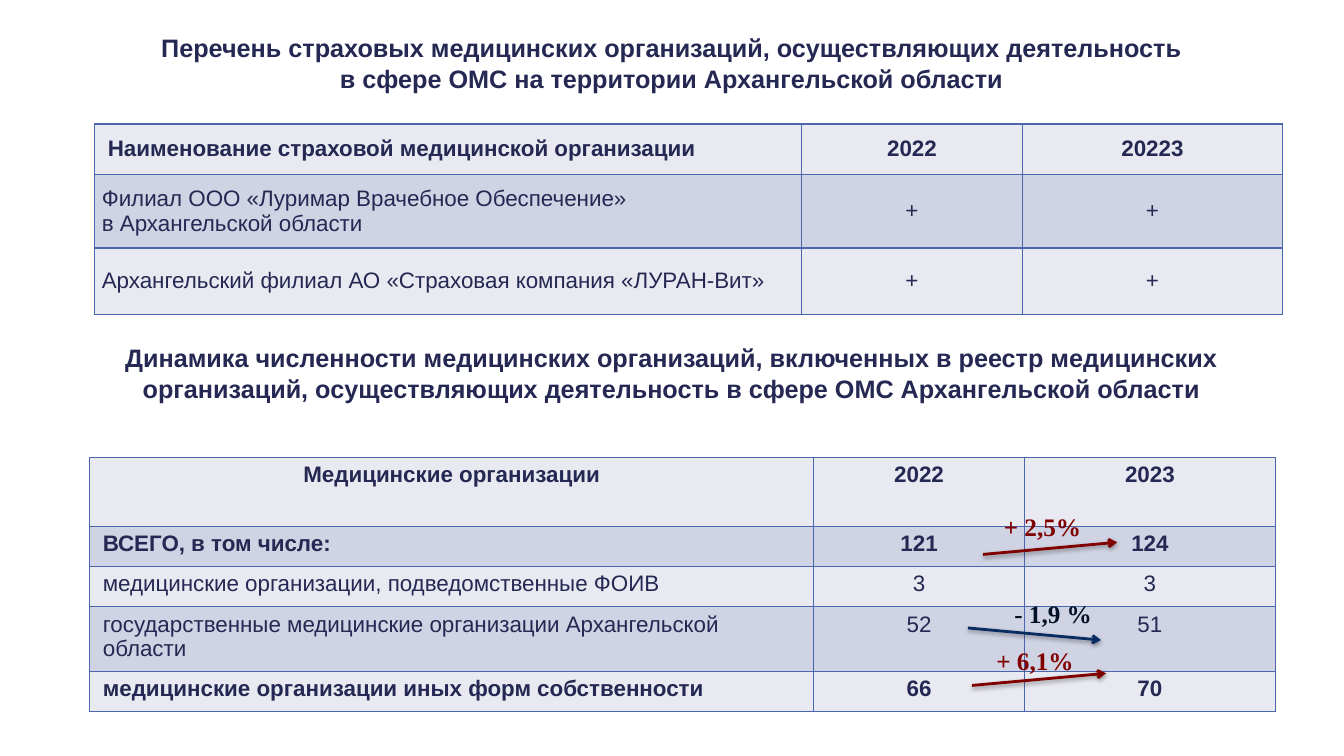
from lxml import etree
from pptx import Presentation
from pptx.dml.color import RGBColor
from pptx.enum.shapes import MSO_CONNECTOR
from pptx.enum.text import MSO_ANCHOR, MSO_AUTO_SIZE, PP_ALIGN
from pptx.oxml import parse_xml
from pptx.util import Inches, Pt

LEFT, CENTER = PP_ALIGN.LEFT, PP_ALIGN.CENTER
TOP, MIDDLE = MSO_ANCHOR.TOP, MSO_ANCHOR.MIDDLE
NO_FIT = MSO_AUTO_SIZE.NONE
STRAIGHT = MSO_CONNECTOR.STRAIGHT
INK = RGBColor(0x24, 0x28, 0x52)
RED = RGBColor(0x80, 0x00, 0x00)
NAVY = RGBColor(0x07, 0x2C, 0x62)
DARK = RGBColor(0x03, 0x12, 0x27)
BANDS = RGBColor(0xE9, 0xEA, 0xF1), RGBColor(0xD0, 0xD3, 0xE3)
GRID = RGBColor(0x4A, 0x66, 0xAC)
NS = "http://schemas.openxmlformats.org/drawingml/2006/main"

TITLE = ("Перечень страховых медицинских организаций, осуществляющих деятельность\n"
         "в сфере ОМС на территории Архангельской области")
TREND = ("Динамика численности медицинских организаций, включенных в реестр медицинских "
         "организаций, осуществляющих деятельность в сфере ОМС Архангельской области")
INSURERS = {
    "box": (0.94, 1.23, 11.79, 1.89),
    "cols": (7.01, 2.19, 2.58),
    "heights": (0.5, 0.73, 0.66),
    "anchor": MIDDLE, "head": LEFT, "bold": {0}, "tight": {1, 2},
    "rows": [
        ("Наименование страховой медицинской организации", "2022", "20223"),
        ("Филиал ООО «Луримар Врачебное Обеспечение»\nв Архангельской области", "+", "+"),
        ("Архангельский филиал АО «Страховая компания «ЛУРАН-Вит»", "+", "+"),
    ],
}
CLINICS = {
    "box": (0.89, 4.54, 11.76, 2.52),
    "cols": (7.18, 2.09, 2.49),
    "heights": (0.68, 0.4, 0.4, 0.64, 0.4),
    "anchor": TOP, "head": CENTER, "bold": {0, 1, 4}, "tight": set(),
    "rows": [
        ("Медицинские организации", "2022", "2023"),
        ("ВСЕГО, в том числе:", "121", "124"),
        ("медицинские организации, подведомственные ФОИВ", "3", "3"),
        ("государственные медицинские организации Архангельской области", "52", "51"),
        ("медицинские организации иных форм собственности", "66", "70"),
    ],
}
CHANGES = [
    ("+ 2,5%", (9.71, 5.02, 1.26, 0.4), RED, (9.75, 5.5, 11.08, 5.38), RED),
    ("+ 6,1%", (9.27, 6.35, 1.99, 0.4), RED, (9.64, 6.8, 10.97, 6.68), RED),
    ("- 1,9 %", (9.45, 5.89, 1.99, 0.4), DARK, (9.6, 6.23, 10.92, 6.35), NAVY),
]
SHADOW = (f'<a:effectLst xmlns:a="{NS}"><a:outerShdw blurRad="40000" dist="20000" '
          'dir="5400000" rotWithShape="0"><a:srgbClr val="000000">'
          '<a:alpha val="38000"/></a:srgbClr></a:outerShdw></a:effectLst>')


def inches(box):
    return [Inches(v) for v in box]


def write(frame, text, size, color=INK, bold=True, align=CENTER, name="Arial"):
    par = frame.paragraphs[0]
    par.text = text
    par.alignment = align
    style = {"size": Pt(size), "bold": bold, "name": name}
    for run in par.runs:
        for key, value in style.items():
            setattr(run.font, key, value)
        run.font.color.rgb = color


def add_text(slide, box, text, **style):
    frame = slide.shapes.add_textbox(*inches(box)).text_frame
    frame.word_wrap = True
    write(frame, text, 18, **style)


def add_edges(cell):
    props = cell._tc.get_or_add_tcPr()
    for side in "LRTB":
        props.append(parse_xml(
            f'<a:ln{side} xmlns:a="{NS}" w="12700"><a:solidFill>'
            f'<a:srgbClr val="{GRID}"/></a:solidFill></a:ln{side}>'))


def add_grid(slide, data):
    rows = data["rows"]
    table = slide.shapes.add_table(len(rows), len(data["cols"]), *inches(data["box"])).table
    for col, width in zip(table.columns, data["cols"]):
        col.width = Inches(width)
    for r, texts in enumerate(rows):
        table.rows[r].height = Inches(data["heights"][r])
        for c, text in enumerate(texts):
            cell = table.cell(r, c)
            tight = c == 0 and r in data["tight"]
            side, edge = (0.07, 0) if tight else (0.13, 0.05)
            layout = {"vertical_anchor": data["anchor"],
                      "margin_left": Inches(side), "margin_right": Inches(side),
                      "margin_top": Inches(edge), "margin_bottom": Inches(edge)}
            for key, value in layout.items():
                setattr(cell, key, value)
            add_edges(cell)
            cell.fill.solid()
            cell.fill.fore_color.rgb = BANDS[r % 2]
            align = CENTER if c else data["head"] if r == 0 else LEFT
            write(cell.text_frame, text, 16, bold=r in data["bold"], align=align)


def add_arrow(slide, ends, color):
    arrow = slide.shapes.add_connector(STRAIGHT, *inches(ends))
    arrow.line.color.rgb = color
    arrow.line.width = Pt(2)
    line = arrow.line._get_or_add_ln()
    etree.SubElement(line, f"{{{NS}}}tailEnd", type="arrow")
    arrow._element.spPr.append(parse_xml(SHADOW))


def main():
    deck = Presentation()
    deck.slide_width, deck.slide_height = Inches(13.33), Inches(7.5)
    slide = deck.slides.add_slide(deck.slide_layouts[5])
    title = slide.shapes.title
    title.left, title.top, title.width, title.height = inches((0.52, 0.21, 12.28, 0.83))
    title.text_frame.auto_size = NO_FIT
    title.text_frame.vertical_anchor = MIDDLE
    write(title.text_frame, TITLE, 18)
    add_grid(slide, INSURERS)
    add_grid(slide, CLINICS)
    add_text(slide, (0.73, 3.35, 11.86, 0.71), TREND)
    for text, box, color, ends, stroke in CHANGES:
        add_arrow(slide, ends, stroke)
        add_text(slide, box, text, color=color, name="Times New Roman")
    deck.save("out.pptx")


if __name__ == "__main__":
    main()
